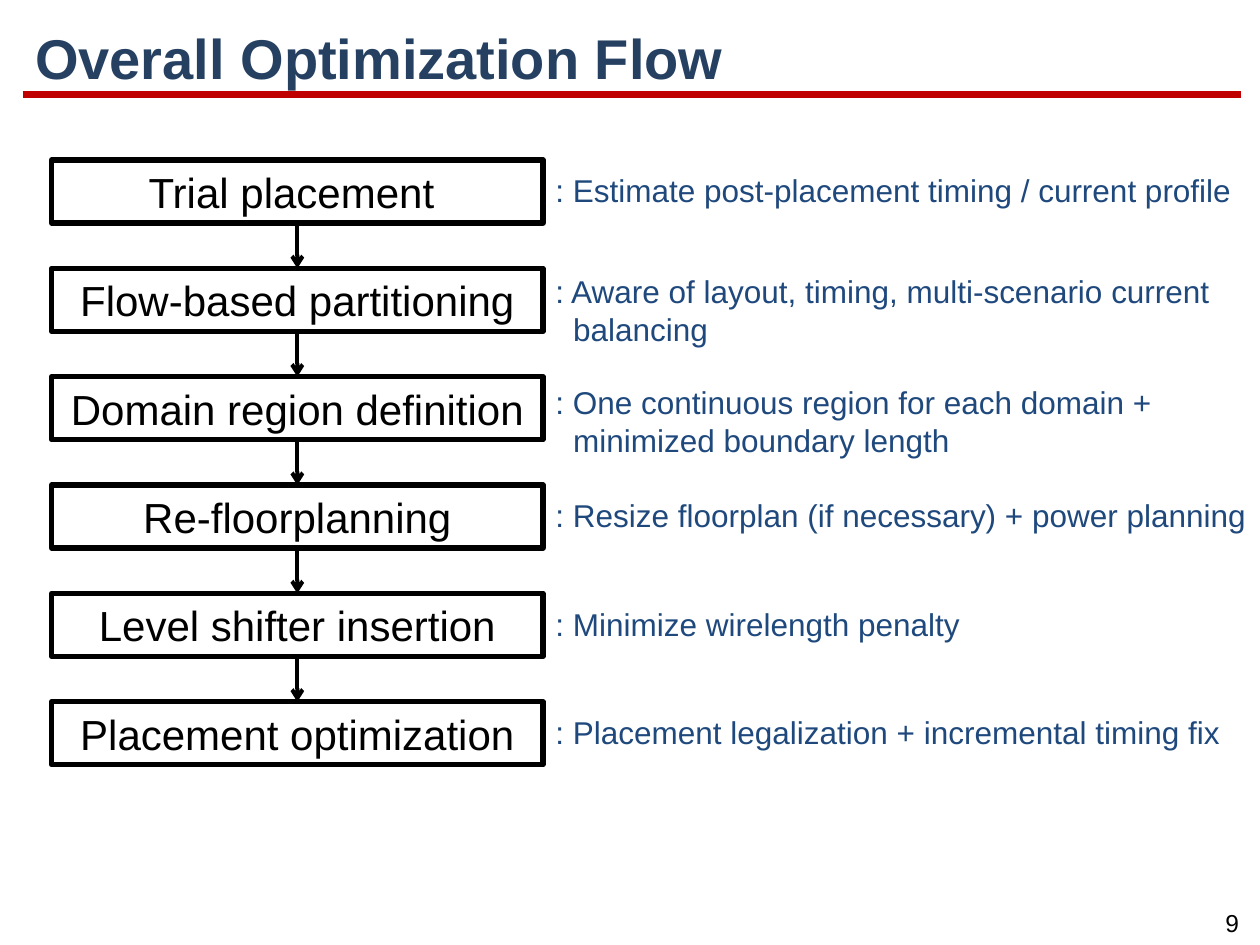
from pptx import Presentation
from pptx.dml.color import RGBColor
from pptx.enum import shapes as kinds, text as txt
from pptx.oxml import ns, xmlchemy as xml
from pptx.util import Inches, Pt

THEME = {
    "face": "Arial",
    "title": {"size": Pt(32), "color": "254061", "bold": True},
    "step": {"size": Pt(24), "color": "000000", "bold": False},
    "note": {"size": Pt(18), "color": "1F497D", "bold": False},
    "page": {"size": Pt(14), "color": "000000", "bold": False},
    "rule": "C00000",
    "edge": "000000",
}
LEFT, TOP, WIDE, HIGH, PITCH = 0.41, 1.27, 3.9, 0.5, 0.86
HANG = Inches(0.14)

# Step name, note, and drop of the note below the top of its box
STEPS = [
    ("Trial placement ", ": Estimate post-placement timing / current profile", 0.04),
    ("Flow-based partitioning",
     ": Aware of layout, timing, multi-scenario current\vbalancing", -0.02),
    ("Domain region definition",
     ": One continuous region for each domain +\vminimized boundary length", 0),
    ("Re-floorplanning", ": Resize floorplan (if necessary) + power planning", 0.04),
    ("Level shifter insertion", ": Minimize wirelength penalty", 0.04),
    ("Placement optimization", ": Placement legalization + incremental timing fix", 0.04),
]


def write(shape, words, role, align, anchor=txt.MSO_ANCHOR.TOP, wrap=True):
    frame = shape.text_frame
    frame.word_wrap, frame.vertical_anchor = wrap, anchor
    para = frame.paragraphs[0]
    para.text, para.alignment = words, align
    look = {"name": THEME["face"], "size": THEME[role]["size"], "bold": THEME[role]["bold"]}
    for run in para.runs:
        for key, val in look.items():
            setattr(run.font, key, val)
        run.font.color.rgb = RGBColor.from_string(THEME[role]["color"])
    return para


def draw(start, end, color, width):
    line = slide.shapes.add_connector(
        kinds.MSO_CONNECTOR.STRAIGHT, *(Inches(v) for v in start + end))
    line.line.color.rgb = RGBColor.from_string(color)
    line.line.width = Pt(width)
    line._element.spPr.append(xml.OxmlElement("a:effectLst"))
    return line


deck = Presentation()
deck.slide_width, deck.slide_height = Inches(10), Inches(7.5)
slide = deck.slides.add_slide(deck.slide_layouts[6])

# Title, rule and page number
draw((0.18, 0.75), (9.85, 0.75), THEME["rule"], 4.5)
title = slide.shapes.add_textbox(Inches(0.18), Inches(0.16), Inches(9.68), Inches(0.65))
head = write(title, "Overall Optimization Flow", "title", txt.PP_ALIGN.LEFT,
             txt.MSO_ANCHOR.MIDDLE)
head.line_spacing = 0.9
page = slide.shapes.add_textbox(Inches(9.56), Inches(7.16), Inches(0.44), Inches(0.34))
write(page, "9", "page", txt.PP_ALIGN.CENTER, wrap=False)

# Steps, each joined to the one above, with a note beside it
last = None
for row, (name, note, drop) in enumerate(STEPS):
    top = TOP + row * PITCH
    box = slide.shapes.add_shape(kinds.MSO_SHAPE.RECTANGLE, Inches(LEFT), Inches(top),
                                 Inches(WIDE), Inches(HIGH))
    box.shadow.inherit = False
    box.fill.background()
    box.line.color.rgb = RGBColor.from_string(THEME["edge"])
    box.line.width = Pt(3)
    write(box, name, "step", txt.PP_ALIGN.CENTER, txt.MSO_ANCHOR.MIDDLE)

    if last is not None:
        mid = LEFT + WIDE / 2
        arrow = draw((mid, top - PITCH + HIGH), (mid, top), THEME["edge"], 2.25)
        arrow.begin_connect(last, 2)
        arrow.end_connect(box, 0)
        tip = xml.OxmlElement("a:tailEnd")
        tip.set("type", "arrow")
        arrow._element.spPr.find(ns.qn("a:ln")).append(tip)
    last = box

    side = slide.shapes.add_textbox(Inches(LEFT + WIDE), Inches(top + drop), Inches(5.69),
                                    Inches(0.71 if "\v" in note else 0.4))
    props = write(side, note, "note", txt.PP_ALIGN.LEFT)._p.get_or_add_pPr()
    for key, val in {"marL": HANG, "indent": -HANG}.items():
        props.set(key, str(int(val)))

deck.save("out.pptx")
